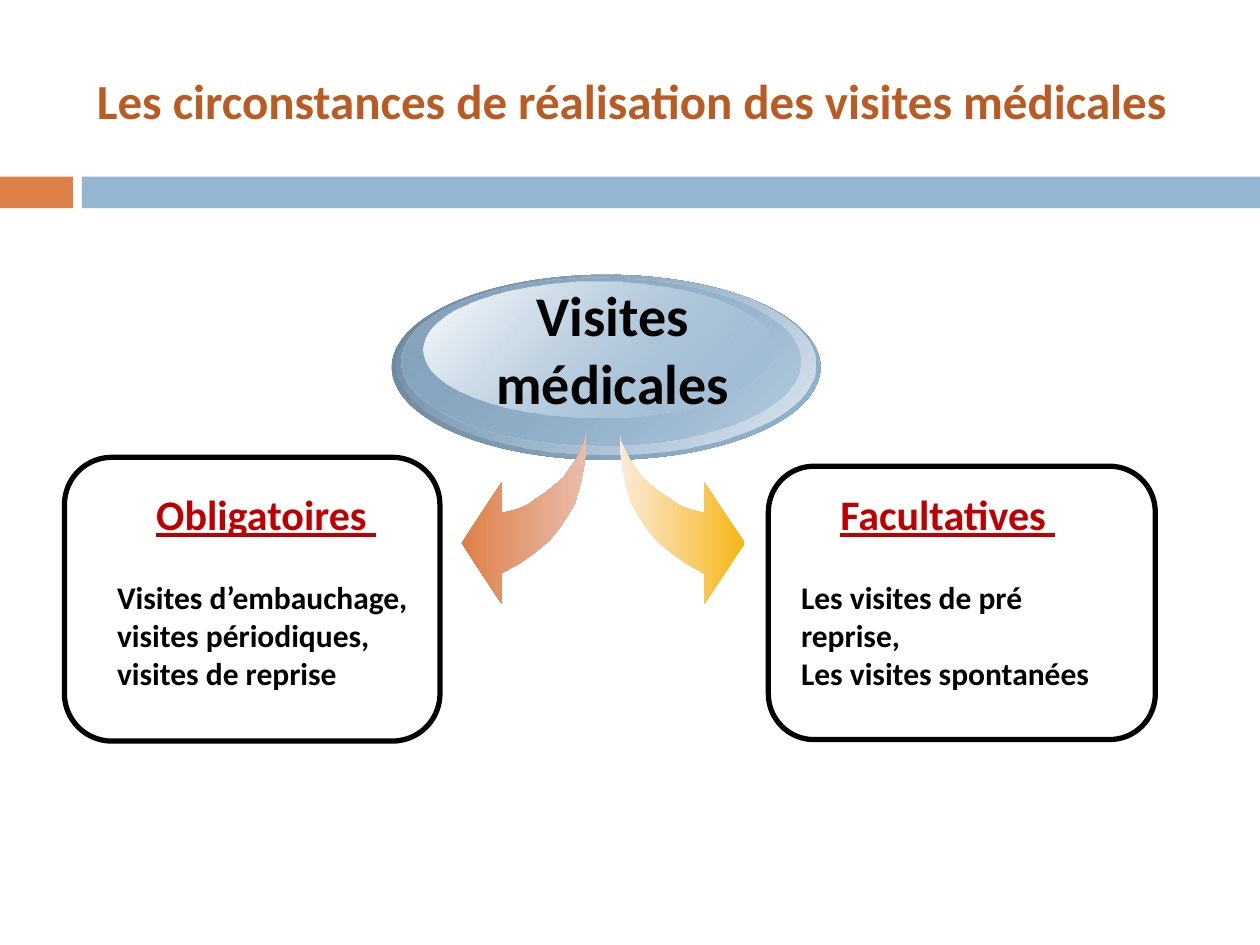
import pptx
import pptx.util
import pptx.dml.color
import pptx.enum.shapes
import pptx.enum.text
import pptx.oxml.ns
import lxml.etree

Cm = pptx.util.Cm
Pt = pptx.util.Pt
Preset = pptx.enum.shapes.MSO_SHAPE
Align = pptx.enum.text.PP_ALIGN

ARROW_WIDTH = 2.51
ARROW_OUTLINE = [
    (2.51, 0), (2.51, 0.38), (2.46, 0.74), (2.39, 1.07), (2.29, 1.4),
    (2.13, 1.68), (1.96, 1.93), (1.75, 2.18), (1.47, 2.41), (1.17, 2.62),
    (0.81, 2.82), (0.81, 3.43), (0, 2.21), (0.81, 0.99), (0.81, 1.6),
    (0.97, 1.57), (1.14, 1.52), (1.32, 1.45), (1.5, 1.32), (1.7, 1.19),
    (1.88, 1.04), (2.06, 0.89), (2.18, 0.71), (2.31, 0.53), (2.41, 0.33),
    (2.49, 0.15),
]


def color(value):
    """Turn a hex string into a colour."""
    return pptx.dml.color.RGBColor.from_string(value)


def add_preset(page, preset, box):
    """Add a preset shape without shadow, fill or line."""
    shape = page.shapes.add_shape(preset, *map(Cm, box))
    shape.shadow.inherit = False
    shape.fill.background()
    shape.line.fill.background()
    return shape


def fill_gradient(shape, stops, angle):
    """Fill with two (hex, opacity percent) stops at a clockwise angle."""
    shape.fill.gradient()
    shape.fill.gradient_angle = (360 - angle) % 360
    for place, (stop, (value, _)) in enumerate(zip(shape.fill.gradient_stops, stops)):
        stop.position = place
        stop.color.rgb = color(value)
    qn = pptx.oxml.ns.qn
    entries = shape._element.spPr.find(qn("a:gradFill")).iter(qn("a:srgbClr"))
    for entry, (_, opacity) in zip(entries, stops):
        if opacity < 100:
            lxml.etree.SubElement(entry, qn("a:alpha"), val=str(opacity * 1000))


def write(frame, lines, size, value, align=Align.LEFT, underline=None):
    """Write bold Calibri paragraphs into a text frame."""
    frame.word_wrap = True
    frame.text = "\n".join(lines)
    for para in frame.paragraphs:
        para.alignment = align
        para.font.name = "Calibri"
        para.font.size = Pt(size)
        para.font.bold = True
        para.font.underline = underline
        para.font.color.rgb = color(value)


def add_text(page, box, *args, **kwargs):
    """Add a text box and write into it."""
    write(page.shapes.add_textbox(*map(Cm, box)).text_frame, *args, **kwargs)


def add_header(page, box, text):
    """Place the title with the two-coloured band below it."""
    left, top, width, height = box
    band_top = top + height - 0.64
    for start, length, value in ((0, 1.47, "DD8047"), (1.65, width - 1.65, "94B6D2")):
        band = add_preset(page, Preset.RECTANGLE, (left + start, band_top, length, 0.64))
        band.fill.solid()
        band.fill.fore_color.rgb = color(value)
    title = page.shapes.title
    title.left, title.top = Cm(left + 1.7), Cm(top + 0.64)
    title.width, title.height = Cm(22.66), Cm(2.74)
    title.text_frame.vertical_anchor = pptx.enum.text.MSO_ANCHOR.MIDDLE
    write(title.text_frame, [text], 28, "B95B22")


def add_hub(page, box, text):
    """Stack the glossy ellipses and their label."""
    left, top, width, height = box
    layers = [
        ((0, 0, width, height), ("6A8296", 100), ("94B6D2", 100)),
        ((0.1, 0, 8.43, 3.63), ("94B6D2", 0), ("E1E9F1", 100)),
        ((0.2, 0.05, 8.03, 3.4), ("86A4BE", 100), ("94B6D2", 48)),
        ((0.63, 0.13, 7.06, 2.74), ("FFFFFF", 100), ("94B6D2", 38)),
    ]
    for (x, y, layer_width, layer_height), *stops in layers:
        layer_box = (left + x, top + y, layer_width, layer_height)
        fill_gradient(add_preset(page, Preset.OVAL, layer_box), stops, 45)
    add_text(page, (left + 0.96, top, 6.99, 3), [text], 32, "000000", Align.CENTER)


def add_arrow(page, left, top, stops, mirrored=False):
    """Draw a curved arrow that points left, or right when mirrored."""
    points = [
        (Cm(left + (ARROW_WIDTH - x if mirrored else x)), Cm(top + y))
        for x, y in ARROW_OUTLINE
    ]
    builder = page.shapes.build_freeform(*points[0])
    builder.add_line_segments(points[1:], close=True)
    arrow = builder.convert_to_shape()
    arrow.shadow.inherit = False
    arrow.line.fill.background()
    fill_gradient(arrow, [(value, 100) for value in stops], 0)


def add_card(page, box, text_left, text_top, heading, lines):
    """Place a rounded frame with an underlined heading and its text."""
    frame = add_preset(page, Preset.ROUNDED_RECTANGLE, box)
    frame.adjustments[0] = 0.167
    frame.line.color.rgb = color("000000")
    frame.line.width = Pt(3)
    add_text(page, (text_left + 0.79, text_top, 5, 1.27), [heading], 24, "C00000",
             underline=True)
    add_text(page, (text_left, text_top + 1.8, 7.1, 2.57), lines, 18, "000000")


def main():
    """Build the slide and save it."""
    deck = pptx.Presentation()
    deck.slide_width, deck.slide_height = Cm(25.4), Cm(19.05)
    page = deck.slides.add_slide(deck.slide_layouts[5])
    add_header(page, (0, 0, 25.4, 4.2),
               "Les circonstances de réalisation des visites médicales")
    add_hub(page, (7.9, 5.54, 8.64, 3.73), "Visites médicales")
    add_arrow(page, 9.3, 8.74, ("DD8047", "EABCAB"))
    add_arrow(page, 12.5, 8.74, ("FCEBD8", "F7B615"), mirrored=True)
    add_card(page, (1.3, 9.22, 7.57, 5.72), 2.11, 9.73, "Obligatoires ",
             ["Visites d’embauchage, visites périodiques, visites de reprise"])
    add_card(page, (15.49, 9.4, 7.8, 5.51), 15.9, 9.73, "Facultatives ",
             ["Les visites de pré reprise,", "Les visites spontanées"])
    deck.save("out.pptx")


if __name__ == "__main__":
    main()
